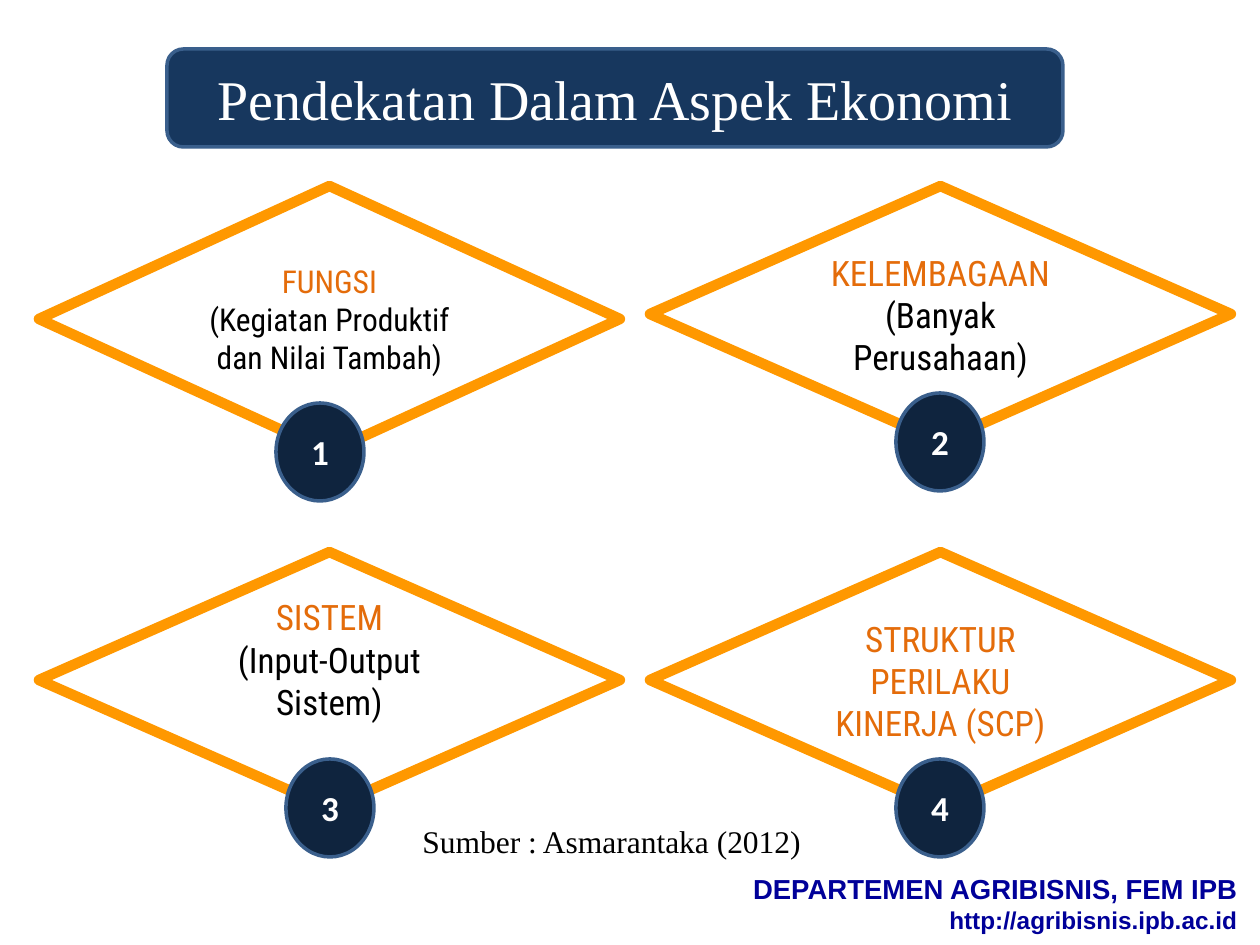
from pptx import Presentation
from pptx.dml.color import RGBColor
from pptx.enum.shapes import MSO_SHAPE
from pptx.enum.text import MSO_ANCHOR, PP_ALIGN
from pptx.util import Pt

ROUNDED, DIAMOND, OVAL = MSO_SHAPE.ROUNDED_RECTANGLE, MSO_SHAPE.DIAMOND, MSO_SHAPE.OVAL
LEFT, CENTER, RIGHT = PP_ALIGN.LEFT, PP_ALIGN.CENTER, PP_ALIGN.RIGHT
TOP, MIDDLE = MSO_ANCHOR.TOP, MSO_ANCHOR.MIDDLE

EMU_PER_PX = 914400 / 126
COLORS = {
    "title": "17375E", "badge": "0F243E", "edge": "3A5F8C", "diamond": "FF9800",
    "heading": "E46C0A", "black": "000000", "white": "FFFFFF", "footer": "000099",
}
PAD = 13
BADGE_W, BADGE_H = 88, 98


def px(n):
    return round(n * EMU_PER_PX)


def rgb(name):
    return RGBColor.from_string(COLORS[name])


def write(sp, lines, font, align=CENTER, anchor=MIDDLE, bold=False):
    """Fill a shape with one paragraph per (text, size, color)."""
    tf = sp.text_frame
    tf.word_wrap = True
    tf.vertical_anchor = anchor
    for i, (text, size, color) in enumerate(lines):
        p = tf.add_paragraph() if i else tf.paragraphs[0]
        p.text = text
        p.alignment = align
        f = p.runs[0].font
        f.name, f.size, f.bold = font, Pt(size), bold
        f.color.rgb = rgb(color)
    return tf


def add_shape(s, kind, box, fill, line, width):
    sp = s.shapes.add_shape(kind, *map(px, box))
    sp.shadow.inherit = False
    if fill:
        sp.fill.solid()
        sp.fill.fore_color.rgb = rgb(fill)
    else:
        sp.fill.background()
    sp.line.color.rgb = rgb(line)
    sp.line.width = Pt(width)
    return sp


def add_text(s, box, lines, font, **style):
    write(s.shapes.add_textbox(*map(px, box)), lines, font, **style)


def add_diamond(s, box, size, headings, detail, lift):
    sp = add_shape(s, DIAMOND, box, None, "diamond", 6)
    lines = [(t, size, "heading") for t in headings]
    if detail:
        lines.append((detail, size, "black"))
    tf = write(sp, lines, "Roboto Condensed")
    tf.margin_left = tf.margin_right = tf.margin_top = px(PAD)
    tf.margin_bottom = px(PAD + 2 * lift)


def add_badge(s, x, y, number):
    sp = add_shape(s, OVAL, (x, y, BADGE_W, BADGE_H), "badge", "edge", 2)
    write(sp, [(str(number), 20, "white")], "Calibri", bold=True)


def main():
    prs = Presentation()
    prs.slide_width, prs.slide_height = px(1260), px(945)
    s = prs.slides.add_slide(prs.slide_layouts[6])

    # Department footer
    add_text(s, (116, 872, 1134, 63),
             [("DEPARTEMEN AGRIBISNIS, FEM IPB", 15.7, "footer"),
              ("http://agribisnis.ipb.ac.id", 13.9, "footer")],
             "Arial", align=RIGHT, bold=True)

    # Title
    title = add_shape(s, ROUNDED, (167, 49, 896, 98), "title", "edge", 2)
    write(title, [("Pendekatan Dalam Aspek Ekonomi", 32, "white")], "Times New Roman")

    # Four approaches: column x, row y, height, size, headings, detail, text lift, badge x, y
    left, right, upper, lower = 39, 650, 186, 552
    approaches = [
        (left, upper, 266, 18, ["FUNGSI"], "(Kegiatan Produktif dan Nilai Tambah)", 0, 276, 403),
        (right, upper, 256, 20, ["KELEMBAGAAN"], "(Banyak Perusahaan)", 0, 896, 393),
        (left, lower, 256, 20, ["SISTEM"], "(Input-Output Sistem)", 21, 286, 759),
        (right, lower, 256, 20, ["STRUKTUR", "PERILAKU", "KINERJA (SCP)"], None, 0, 896, 759),
    ]
    for n, (x, y, h, size, headings, detail, lift, bx, by) in enumerate(approaches, 1):
        add_diamond(s, (x, y, 581, h), size, headings, detail, lift)
        add_badge(s, bx, by, n)

    # Source note
    add_text(s, (410, 816, 417, 50), [("Sumber : Asmarantaka (2012)", 18, "black")],
             "Times New Roman", align=LEFT, anchor=TOP)

    prs.save("out.pptx")


if __name__ == "__main__":
    main()
